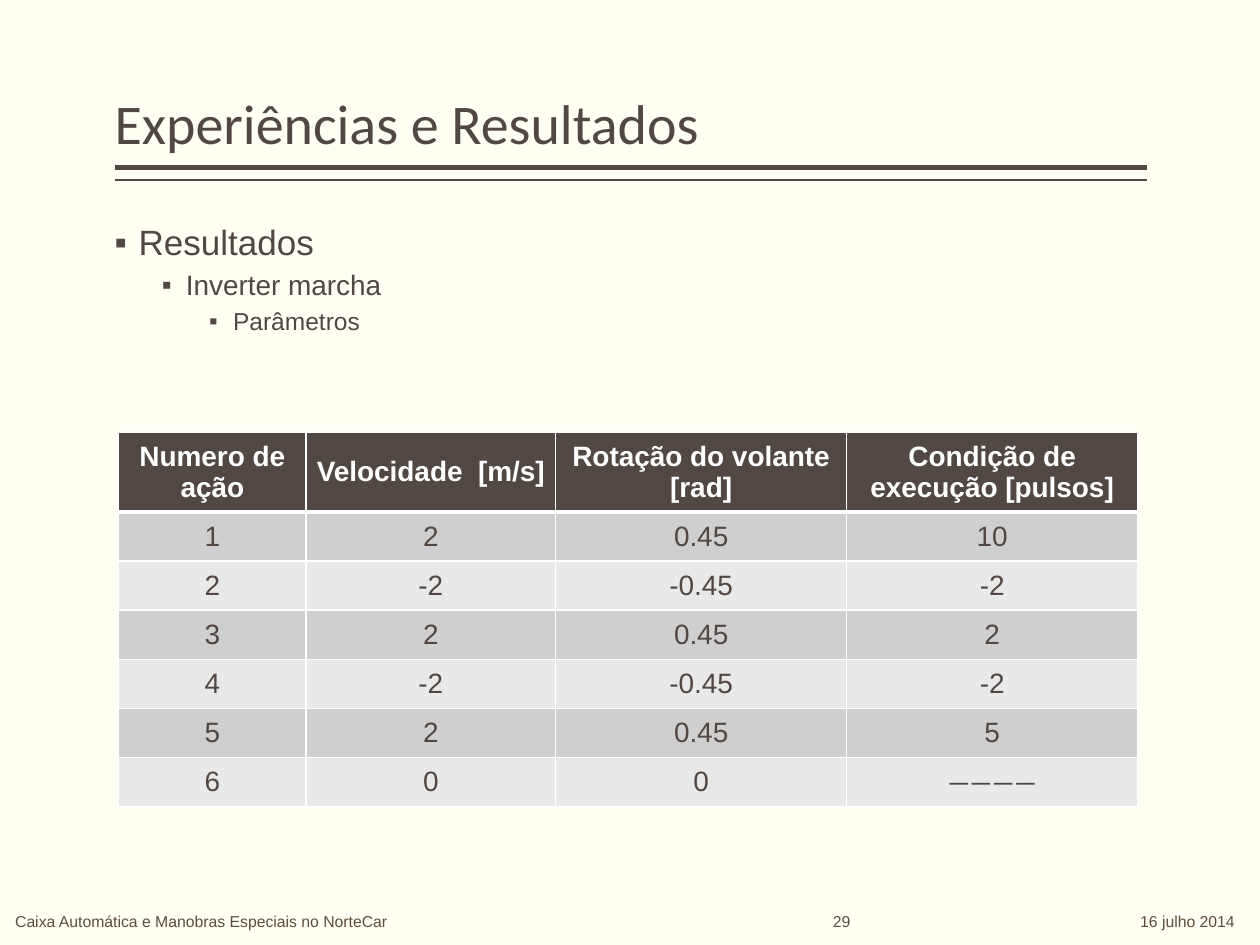
from lxml import etree
from pptx import Presentation
from pptx.dml.color import RGBColor
from pptx.enum.shapes import MSO_CONNECTOR
from pptx.enum.text import MSO_ANCHOR, PP_ALIGN
from pptx.oxml.ns import qn
from pptx.util import Inches, Pt

STRAIGHT = MSO_CONNECTOR.STRAIGHT
TOP, MIDDLE, BOTTOM = MSO_ANCHOR.TOP, MSO_ANCHOR.MIDDLE, MSO_ANCHOR.BOTTOM
LEFT, CENTER, RIGHT = PP_ALIGN.LEFT, PP_ALIGN.CENTER, PP_ALIGN.RIGHT

COLORS = {
    "background": "FFFFF3",
    "brown": "514843",
    "footer": "5C4E3A",
    "white": "FFFFFF",
    "odd_row": "D0CFCF",
    "even_row": "E9E9E9",
}


def rgb(name):
    return RGBColor.from_string(COLORS[name])


def write(paragraph, text, size=16, font="Arial", color="brown", bold=False,
          align=LEFT, spacing=0.9, before=0, bullet_level=None):
    paragraph.alignment = align
    paragraph.line_spacing = spacing
    paragraph.space_before = Pt(before)
    run = paragraph.add_run()
    run.text = text
    run.font.size = Pt(size)
    run.font.name = font
    run.font.bold = bold
    run.font.color.rgb = rgb(color)
    if bullet_level is not None:
        paragraph.level = bullet_level
        properties = paragraph._p.get_or_add_pPr()
        properties.set("marL", str(Inches(0.19 + 0.375 * bullet_level)))
        properties.set("indent", str(Inches(-0.19)))
        etree.SubElement(properties, qn("a:buFont")).set("typeface", "Arial")
        etree.SubElement(properties, qn("a:buChar")).set("char", "▪")


def text_frame(left, top, width, height, anchor=TOP):
    frame = slide.shapes.add_textbox(
        Inches(left), Inches(top), Inches(width), Inches(height)).text_frame
    frame.word_wrap = True
    frame.vertical_anchor = anchor
    frame.margin_left = frame.margin_right = 0
    frame.margin_top = frame.margin_bottom = Inches(0.04)
    return frame


prs = Presentation()
prs.slide_width = Inches(10)
prs.slide_height = Inches(7.5)
slide = prs.slides.add_slide(prs.slide_layouts[6])
slide.background.fill.solid()
slide.background.fill.fore_color.rgb = rgb("background")

for rule_y, weight in [(1.33, 3), (1.43, 1)]:
    rule = slide.shapes.add_connector(
        STRAIGHT, Inches(9.1), Inches(rule_y), Inches(0.91), Inches(rule_y))
    rule.line.color.rgb = rgb("brown")
    rule.line.width = Pt(weight)
    etree.SubElement(rule._element.spPr, qn("a:effectLst"))

title = text_frame(0.91, 0.08, 8.19, 1.2, anchor=BOTTOM)
write(title.paragraphs[0], "Experiências e Resultados", size=32, font="Calibri")

outline = text_frame(0.91, 1.75, 8.19, 5.15)
topics = [("Resultados", 20, 13.5), ("Inverter marcha", 16, 4.5), ("Parâmetros", 14, 4.5)]
for level, (topic, size, before) in enumerate(topics):
    paragraph = outline.add_paragraph() if level else outline.paragraphs[0]
    write(paragraph, topic, size=size, before=before, bullet_level=level)

footers = [
    ("Caixa Automática e Manobras Especiais no NorteCar", 0.12, 4.38, LEFT),
    ("29", 6.25, 0.5, RIGHT),
    ("16 julho 2014", 8.3, 1.5, RIGHT),
]
for text, left, width, align in footers:
    footer = text_frame(left, 7.21, width, 0.29)
    write(footer.paragraphs[0], text, size=9, color="footer", align=align)

actions = [
    ["Numero de ação", "Velocidade  [m/s]", "Rotação do volante [rad]",
     "Condição de execução [pulsos]"],
    ["1", "2", "0.45", "10"],
    ["2", "-2", "-0.45", "-2"],
    ["3", "2", "0.45", "2"],
    ["4", "-2", "-0.45", "-2"],
    ["5", "2", "0.45", "5"],
    ["6", "0", "0", "————"],
]
column_widths = [1.49, 1.98, 2.31, 2.31]
table = slide.shapes.add_table(
    len(actions), len(column_widths),
    Inches(0.94), Inches(3.43), Inches(8.1), Inches(2.95)).table
for column, width in zip(table.columns, column_widths):
    column.width = Inches(width)

for row_index, action in enumerate(actions):
    header = row_index == 0
    table.rows[row_index].height = Inches(0.63 if header else 0.39)
    fill = "brown" if header else "odd_row" if row_index % 2 else "even_row"
    for column_index, value in enumerate(action):
        cell = table.cell(row_index, column_index)
        cell.vertical_anchor = MIDDLE
        cell.margin_left = cell.margin_right = Inches(0.07)
        cell.margin_top = cell.margin_bottom = Inches(0.05)
        write(cell.text_frame.paragraphs[0], value, bold=header, align=CENTER, spacing=1.0,
              color="white" if header else "brown",
              font="Lato" if value == "————" else "Arial")
        cell_properties = cell._tc.get_or_add_tcPr()
        for side in ["lnL", "lnR", "lnT", "lnB"]:
            thick = (header and side == "lnB") or (row_index == 1 and side == "lnT")
            border = etree.SubElement(cell_properties, qn("a:" + side))
            border.set("w", str(Pt(3 if thick else 1)))
            border_fill = etree.SubElement(border, qn("a:solidFill"))
            etree.SubElement(border_fill, qn("a:srgbClr")).set("val", COLORS["white"])
        cell.fill.solid()
        cell.fill.fore_color.rgb = rgb(fill)

prs.save("out.pptx")
